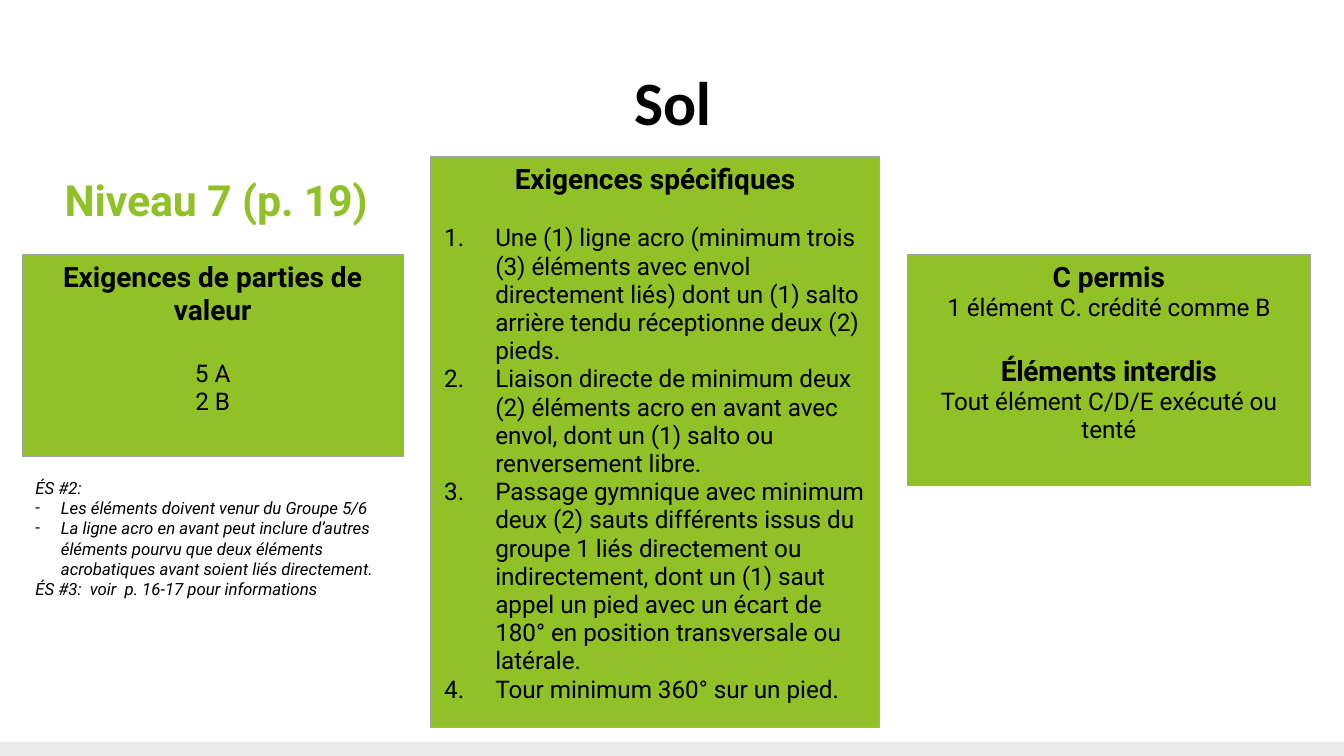
from lxml import etree
from pptx import Presentation
from pptx.dml.color import RGBColor
from pptx.enum.shapes import MSO_SHAPE as Shape
from pptx.enum.text import MSO_ANCHOR as Anchor, PP_ALIGN as Align
from pptx.oxml.ns import qn
from pptx.util import Pt

PX = 4572  # 200 px to the inch
GREEN, BLACK, GREY, PALE = "90C126", "000000", "A5A5A5", "EBEBEB"


def color(value):
    return RGBColor.from_string(value)


def write(frame, lines):
    """Fill a text frame with (text, font values, paragraph values, bullet, indent)."""
    for index, (text, font, layout, bullet, indent) in enumerate(lines):
        para = frame.add_paragraph() if index else frame.paragraphs[0]
        for name, value in layout.items():
            setattr(para, name, value)
        span = para.add_run()
        span.text = text
        values = {"name": "Roboto", **font}
        span.font.color.rgb = color(values.pop("ink", BLACK))
        spacing = values.pop("spacing", None)
        if spacing:
            span.font._element.set("spc", str(spacing))
        for name, value in values.items():
            setattr(span.font, name, value)
        if bullet:
            props = para._p.get_or_add_pPr()
            props.set("marL", str(indent * PX))
            props.set("indent", str(-indent * PX))
            etree.SubElement(props, qn("a:buFont"), typeface="Roboto")
            if bullet == "1.":
                etree.SubElement(props, qn("a:buAutoNum"), type="arabicPeriod")
            else:
                etree.SubElement(props, qn("a:buChar"), char=bullet)


deck = Presentation()
deck.slide_width, deck.slide_height = 2000 * PX, 1125 * PX
page = deck.slides.add_slide(deck.slide_layouts[6])

# Footer strip
strip = page.shapes.add_shape(Shape.RECTANGLE, 0, 1104 * PX, 2000 * PX, 21 * PX)
strip.shadow.inherit = False
strip.fill.solid()
strip.fill.fore_color.rgb = color(PALE)
strip.line.fill.background()

# Text styles
head = {"size": Pt(15), "bold": True}
body = {"size": Pt(13), "bold": False}
note = {"size": Pt(9), "italic": True}
center = {"alignment": Align.CENTER}
left = {"alignment": Align.LEFT}
gap = {"space_before": Pt(17.6)}
small_gap = {"space_before": Pt(15.2)}

# Title, level and notes: left, top, width, height, inset x, inset y, anchor, lines
texts = [
    (81, 105, 1840, 90, 0, 0, Anchor.MIDDLE, [
        ("Sol", {"name": "Calibri", "size": Pt(33), "bold": True, "spacing": -10},
         center, None, 0)]),
    (96, 258, 1855, 78, 0, 0, Anchor.TOP, [
        ("Niveau 7 (p. 19)", {"size": Pt(23), "bold": True, "ink": GREEN, "spacing": -10},
         left, None, 0)]),
    (33, 701, 608, 202, 20, 10, Anchor.TOP, [
        ("ÉS #2:", note, left, None, 0),
        ("Les éléments doivent venur du Groupe 5/6", note, left, "-", 38),
        ("La ligne acro en avant peut inclure d’autres éléments pourvu que deux "
         "éléments acrobatiques avant soient liés directement.", note, left, "-", 38),
        ("ÉS #3:  voir  p. 16-17 pour informations", note, left, None, 0)]),
]
for x, y, width, height, inset_x, inset_y, anchor, lines in texts:
    box = page.shapes.add_textbox(x * PX, y * PX, width * PX, height * PX)
    frame = box.text_frame
    settings = {"word_wrap": True, "vertical_anchor": anchor,
                "margin_left": inset_x * PX, "margin_right": inset_x * PX,
                "margin_top": inset_y * PX, "margin_bottom": inset_y * PX}
    for name, value in settings.items():
        setattr(frame, name, value)
    write(frame, lines)

# Requirement panels: left, top, width, height, lines
requirements = [
    "Une (1) ligne acro (minimum trois (3) éléments avec envol directement liés) "
    "dont un (1) salto arrière tendu réceptionne deux (2) pieds.",
    "Liaison directe de minimum deux (2) éléments acro en avant avec envol, "
    "dont un (1) salto ou renversement libre.",
    "Passage gymnique avec minimum deux (2) sauts différents issus du groupe 1 "
    "liés directement ou indirectement, dont un (1) saut appel un pied avec un "
    "écart de 180° en position transversale ou latérale.",
    "Tour minimum 360° sur un pied.",
]
panels = [
    (33, 379, 567, 300, [
        ("Exigences de parties de valeur", head, center, None, 0),
        ("5 A", body, {**center, **gap}, None, 0),
        ("2 B", body, center, None, 0)]),
    (641, 233, 668, 850, [
        ("Exigences spécifiques", head, center, None, 0),
        *[(text, body, left if index else {**left, **small_gap}, "1.", 76)
          for index, text in enumerate(requirements)]]),
    (1350, 379, 600, 344, [
        ("C permis", head, center, None, 0),
        ("1 élément C. crédité comme B", body, center, None, 0),
        ("Éléments interdis", {**head, "spacing": -10}, {**center, **gap}, None, 0),
        ("Tout élément C/D/E exécuté ou tenté", body, center, None, 0)]),
]
for x, y, width, height, lines in panels:
    table = page.shapes.add_table(1, 1, x * PX, y * PX, width * PX, height * PX).table
    table.first_row = table.horz_banding = False
    cell = table.cell(0, 0)
    cell.fill.solid()
    cell.fill.fore_color.rgb = color(GREEN)
    write(cell.text_frame, lines)

    # Thin grey borders, placed before the fill
    props = cell._tc.get_or_add_tcPr()
    for index, side in enumerate(["a:lnL", "a:lnR", "a:lnT", "a:lnB"]):
        border = etree.Element(qn(side), w=str(Pt(0.5)))
        fill = etree.SubElement(border, qn("a:solidFill"))
        etree.SubElement(fill, qn("a:srgbClr"), val=GREY)
        props.insert(index, border)

deck.save("out.pptx")
